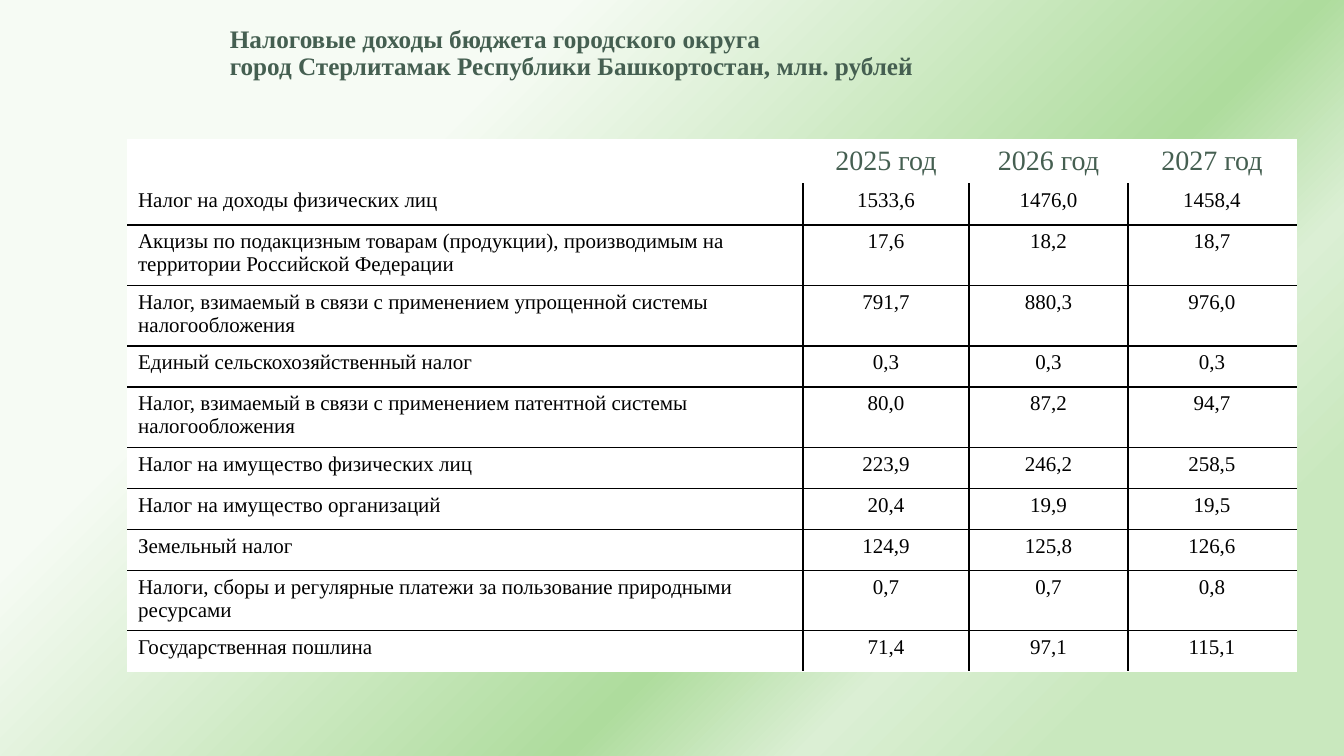
"""Build the slide with the tax revenue table of the city budget."""
from lxml.etree import SubElement
from pptx import Presentation
from pptx.dml.color import RGBColor
from pptx.enum.text import MSO_ANCHOR, PP_ALIGN
from pptx.oxml.ns import qn
from pptx.util import Pt

PX = 9076
THEME = {
    "font": "Times New Roman",
    "green": "455F51", "black": "000000", "white": "FFFFFF",
    "title": 18, "header": 20, "body": 15,
    "gradient": [(27, "F6FBF4", 82), (63, "AEDC9D", 100),
                 (74, "DBEFD4", 100), (86, "C9E8BE", 100)],
}
HEADERS = ["", "2025 год", "2026 год", "2027 год"]
TAXES = [
    ("Налог на доходы физических лиц", "1533,6", "1476,0", "1458,4"),
    ("Акцизы по подакцизным товарам (продукции), производимым на территории Российской Федерации",
     "17,6", "18,2", "18,7"),
    ("Налог, взимаемый в связи с применением упрощенной системы налогообложения",
     "791,7", "880,3", "976,0"),
    ("Единый сельскохозяйственный налог", "0,3", "0,3", "0,3"),
    ("Налог, взимаемый в связи с применением патентной системы налогообложения",
     "80,0", "87,2", "94,7"),
    ("Налог на имущество физических лиц", "223,9", "246,2", "258,5"),
    ("Налог на имущество организаций", "20,4", "19,9", "19,5"),
    ("Земельный налог", "124,9", "125,8", "126,6"),
    ("Налоги, сборы и регулярные платежи за пользование природными ресурсами",
     "0,7", "0,7", "0,8"),
    ("Государственная пошлина", "71,4", "97,1", "115,1"),
]
COLUMN_WIDTHS = [675, 166, 159, 168]
HEADER_HEIGHT, SINGLE_HEIGHT, DOUBLE_HEIGHT = 44, 41, 60
ONE_LINE_LIMIT = 60


def write(text_frame, text, size, color, bold=False, align=PP_ALIGN.LEFT, spacing=1.0):
    paragraph = text_frame.paragraphs[0]
    paragraph.text = text
    paragraph.alignment = align
    paragraph.line_spacing = spacing
    for run in paragraph.runs:
        run.font.name = THEME["font"]
        run.font.size = Pt(size)
        run.font.bold = bold
        run.font.color.rgb = RGBColor.from_string(color)


def add_border(cell, side, color):
    line = SubElement(cell._tc.get_or_add_tcPr(), qn(f"a:ln{side}"), w=str(Pt(1)))
    fill = SubElement(line, qn("a:solidFill"))
    SubElement(fill, qn("a:srgbClr"), val=color)


presentation = Presentation()
presentation.slide_width = 1344 * PX
presentation.slide_height = 756 * PX
slide = presentation.slides.add_slide(presentation.slide_layouts[6])

background = slide.background.fill
background.gradient()
background.gradient_angle = 315
stops = slide.element.find(".//" + qn("a:gsLst"))
for stop in list(stops):
    stops.remove(stop)
for position, color, opacity in THEME["gradient"]:
    stop = SubElement(stops, qn("a:gs"), pos=str(position * 1000))
    shade = SubElement(stop, qn("a:srgbClr"), val=color)
    if opacity < 100:
        SubElement(shade, qn("a:alpha"), val=str(opacity * 1000))

title = slide.shapes.add_textbox(220 * PX, 27 * PX, 1136 * PX, 54 * PX)
title.text_frame.word_wrap = True
title.text_frame.vertical_anchor = MSO_ANCHOR.MIDDLE
write(title.text_frame,
      "Налоговые доходы бюджета городского округа\v"
      "город Стерлитамак Республики Башкортостан, млн. рублей",
      THEME["title"], THEME["green"], bold=True, spacing=0.9)

row_heights = [HEADER_HEIGHT] + [
    DOUBLE_HEIGHT if len(tax[0]) > ONE_LINE_LIMIT else SINGLE_HEIGHT for tax in TAXES]
rows = [HEADERS, *TAXES]
last_row, last_column = len(rows) - 1, len(HEADERS) - 1
table = slide.shapes.add_table(
    len(rows), len(HEADERS), 128 * PX, 140 * PX,
    sum(COLUMN_WIDTHS) * PX, sum(row_heights) * PX).table
table.first_row = False
table.horz_banding = False
for column, width in zip(table.columns, COLUMN_WIDTHS):
    column.width = width * PX
for row, height in zip(table.rows, row_heights):
    row.height = height * PX

for row_index, values in enumerate(rows):
    is_header = row_index == 0
    for column_index, value in enumerate(values):
        cell = table.cell(row_index, column_index)
        black_sides = {
            "L": not is_header and column_index > 0,
            "R": not is_header and column_index < last_column,
            "T": row_index > 1,
            "B": 0 < row_index < last_row,
        }
        for side, is_black in black_sides.items():
            add_border(cell, side, THEME["black" if is_black else "white"])
        cell.fill.solid()
        cell.fill.fore_color.rgb = RGBColor.from_string(THEME["white"])
        write(cell.text_frame, value,
              THEME["header" if is_header else "body"],
              THEME["green" if is_header else "black"],
              align=PP_ALIGN.CENTER if column_index else PP_ALIGN.LEFT)

presentation.save("out.pptx")
